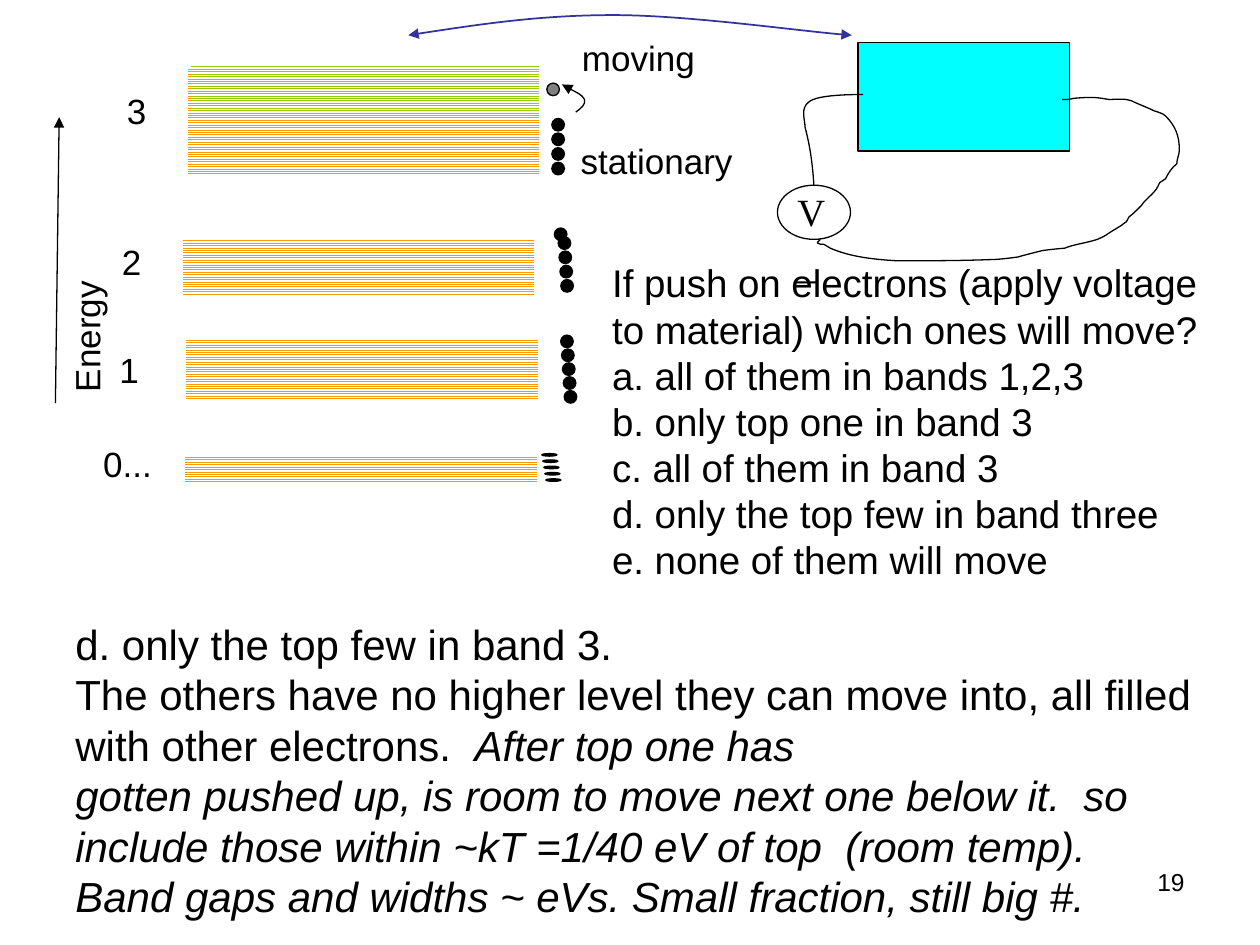
from lxml.etree import SubElement
from pptx import Presentation
from pptx.dml.color import RGBColor
from pptx.enum.dml import MSO_PATTERN
from pptx.enum.shapes import MSO_CONNECTOR, MSO_SHAPE
from pptx.enum.text import MSO_AUTO_SIZE, PP_ALIGN
from pptx.oxml.ns import qn
from pptx.util import Inches, Pt

COLS, ROWS = 100, 75
CELL = Inches(10) / COLS
BLACK, WHITE, GRAY = "000000", "FFFFFF", "808080"
ORANGE, GREEN, CYAN, NAVY = "FF9900", "99CC00", "00FFFF", "333399"


def cells(*values):
    """Turn grid columns and rows into lengths."""
    return [round(v * CELL) for v in values]


def color(hex_code):
    return RGBColor.from_string(hex_code)


def set_line(sp, hex_code=BLACK, width=0.75, head=False, tail=False):
    sp.line.color.rgb = color(hex_code)
    sp.line.width = Pt(width)
    ln = sp.line._get_or_add_ln()
    for tag, wanted in (("a:headEnd", head), ("a:tailEnd", tail)):
        if wanted:
            SubElement(ln, qn(tag), type="triangle")


def add_text(s, box, paragraphs, size, font="Arial", wrap=False,
             align=PP_ALIGN.LEFT, rotation=0):
    """Each paragraph is a list of (text, italic) runs."""
    sp = s.shapes.add_textbox(*cells(*box))
    sp.rotation = rotation
    tf = sp.text_frame
    tf.word_wrap = wrap
    tf.auto_size = MSO_AUTO_SIZE.SHAPE_TO_FIT_TEXT
    for i, runs in enumerate(paragraphs):
        p = tf.paragraphs[0] if i == 0 else tf.add_paragraph()
        p.alignment = align
        for text, italic in runs:
            r = p.add_run()
            r.text = text
            r.font.name = font
            r.font.size = Pt(size)
            r.font.italic = italic
            r.font.color.rgb = color(BLACK)


def add_label(s, box, text, size=20, **options):
    add_text(s, box, [[(text, False)]], size, **options)


def add_outlined(s, kind, box, fill=None):
    sp = s.shapes.add_shape(kind, *cells(*box))
    sp.shadow.inherit = False
    if fill:
        sp.fill.solid()
        sp.fill.fore_color.rgb = color(fill)
    else:
        sp.fill.background()
    set_line(sp)


def add_band(s, box, hex_code=ORANGE):
    """An energy band, hatched with its levels."""
    sp = s.shapes.add_shape(MSO_SHAPE.RECTANGLE, *cells(*box))
    sp.shadow.inherit = False
    sp.fill.patterned()
    sp.fill.pattern = MSO_PATTERN.NARROW_HORIZONTAL
    sp.fill.fore_color.rgb = color(hex_code)
    sp.fill.back_color.rgb = color(WHITE)
    sp.line.fill.background()


def add_electrons(s, places, width=1, height=1, fill=BLACK):
    for x, y in places:
        add_outlined(s, MSO_SHAPE.OVAL, (x, y, width, height), fill)


def add_curve(s, points, **line):
    """Bezier curve: a start, then two handles and an end for each segment."""
    start, *rest = [cells(*point) for point in points]
    builder = s.shapes.build_freeform(*start)
    builder.add_line_segments(rest, close=False)
    sp = builder.convert_to_shape()
    steps = list(sp._element.iter(qn("a:lnTo")))
    for i in range(0, len(steps), 3):
        first, *others = steps[i:i + 3]
        first.tag = qn("a:cubicBezTo")
        for step in others:
            first.append(step[0])
            step.getparent().remove(step)
    sp.shadow.inherit = False
    sp.fill.background()
    set_line(sp, **line)


def add_arrow(s, start, end):
    sp = s.shapes.add_connector(MSO_CONNECTOR.STRAIGHT, *cells(*start, *end))
    set_line(sp, tail=True)
    SubElement(sp._element.spPr, qn("a:effectLst"))


def draw_bands(s):
    for box in ((14.9, 5.3, 27.9, 8.6), (14.5, 18.9, 27.9, 4.6),
                (14.8, 26.8, 27.9, 4.9), (14.7, 36.1, 27.9, 2.2)):
        add_band(s, box)
    add_band(s, (15.2, 5.1, 27.6, 3.9), GREEN)
    for box, text in (((9.1, 6.6, 3.6, 4.3), "3"), ((8.7, 18.6, 3.6, 4.3), "2"),
                      ((8.5, 27.2, 3.6, 4.3), "1"), ((7.2, 34.6, 5.9, 4.3), "0..."),
                      ((45.2, 2.4, 11, 4.3), "moving"),
                      ((45.1, 10.6, 14.2, 4.3), "stationary")):
        add_label(s, box, text)
    add_label(s, (1.4, 24.5, 10.9, 4.3), "Energy", rotation=270)
    add_arrow(s, (4.4, 32), (4.7, 9.3))


def draw_electrons(s):
    add_electrons(s, [(43.8, 9.4 + 1.16 * i) for i in range(4)])
    add_electrons(s, [(44, 18.1)] + [(44.3 + 0.07 * i, 18.8 + 1.13 * i) for i in range(4)])
    add_electrons(s, [(44.5 + 0.07 * i, 26.6 + 1.1 * i) for i in range(5)])
    add_electrons(s, [(43 + 0.08 * i, 36 + 0.5 * i) for i in range(5)], 1.2, 0.2)
    add_electrons(s, [(43.4, 6.6)], fill=GRAY)
    add_curve(s, [(45.7, 8.9), (46.1, 8.6), (46.5, 8.3), (46.4, 7.9),
                  (46.2, 7.5), (44.9, 6.9), (44.6, 6.7)], tail=True)


def draw_circuit(s):
    add_outlined(s, MSO_SHAPE.RECTANGLE, (68.1, 3.4, 16.8, 8.6), CYAN)
    add_outlined(s, MSO_SHAPE.OVAL, (61.7, 14.7, 5.8, 4.3))
    left_wire = [(64.6, 14.7), (64.5, 13.1), (64.3, 11.6), (63.9, 10.1),
                 (63.9, 9.5), (63.5, 8.6), (64.2, 8.1),
                 (64.8, 7.5), (67.8, 7.5), (68.5, 7.5)]
    right_wire = [
        (65.1, 19), (65, 19.1), (64.8, 19.3), (64.9, 19.3),
        (65, 19.4), (65.2, 19.4), (65.4, 19.4), (65.6, 19.5), (65.7, 19.6), (65.9, 19.7),
        (67.5, 20.4), (69.4, 20.6), (71.2, 20.7), (73.7, 20.7), (76.2, 20.7), (78.8, 20.6),
        (79.4, 20.6), (80.8, 20.4), (80.8, 20.4), (81.1, 20.3), (82.3, 20), (82.7, 19.9),
        (83.3, 19.8), (84.5, 19.7), (84.5, 19.7), (85.2, 19.4), (86.2, 19.3), (87.1, 19),
        (88, 18.6), (87.5, 18.8), (88.5, 18.2), (88.7, 18.1), (88.8, 18), (89, 17.9),
        (89.1, 17.8), (89.4, 17.6), (89.4, 17.6), (89.7, 17.1), (89.4, 17.4), (90, 16.9),
        (90.2, 16.7), (90.6, 16.3), (90.6, 16.3), (90.9, 15.8), (91.6, 15.4), (91.9, 14.8),
        (92.1, 14.4), (91.9, 14.6), (92.5, 14.2), (92.7, 13.8), (93, 13.3), (93.4, 13),
        (93.4, 12.6), (93.6, 12.3), (93.6, 11.9), (93.6, 10.8), (93.3, 10), (92.5, 9.2),
        (92.3, 9), (91.9, 8.9), (91.6, 8.8), (91, 8.5), (90.4, 8.3), (89.8, 8),
        (89.3, 7.8), (88.6, 7.9), (88, 7.9), (86.9, 7.7), (86.6, 7.7), (85.3, 7.8),
        (84.7, 7.9), (85, 7.9), (84.3, 7.9)]
    for wire in (left_wire, right_wire):
        add_curve(s, wire)
    add_label(s, (62.3, 14.4, 4.3, 4.7), "V", 22, font="Times New Roman")
    add_label(s, (62.2, 18.3, 3.7, 5), "_", 24, font="Times New Roman")
    add_curve(s, [(32.4, 2.8), (37.6, 2), (42.8, 1.2), (48.7, 1.2),
                  (54.5, 1.2), (64.4, 2.6), (67.6, 2.8)],
              hex_code=NAVY, width=1, head=True, tail=True)


def write_question(s):
    lines = ("If push on electrons (apply voltage",
             "to material) which ones will move?",
             "a. all of them in bands 1,2,3",
             "b. only top one in band 3",
             "c. all of them in band 3",
             "d. only the top few in band three",
             "e. none of them will move")
    add_text(s, (47.6, 20.1, 48.7, 26.6), [[(line, False)] for line in lines], 22)


def write_answer(s):
    add_text(s, (5, 48.6, 90.6, 25), [
        [("d. only the top few in band 3.", False)],
        [("The others have no higher level they can move into, all filled "
          "with other electrons.  ", False), ("After top one has", True)],
        [("gotten pushed up, is room to move next one below it.  so include "
          "those within ~kT =1/40 eV of top  (room temp).", True)],
        [("Band gaps and widths ~ eVs. Small fraction, still big #.", True)],
    ], 24, wrap=True)


def main():
    prs = Presentation()
    prs.slide_width, prs.slide_height = cells(COLS, ROWS)
    s = prs.slides.add_slide(prs.slide_layouts[6])
    add_label(s, (71.7, 68.3, 23.3, 5.2), "19", 14, wrap=True, align=PP_ALIGN.RIGHT)
    draw_bands(s)
    draw_electrons(s)
    write_answer(s)
    draw_circuit(s)
    write_question(s)
    prs.save("out.pptx")


if __name__ == "__main__":
    main()
